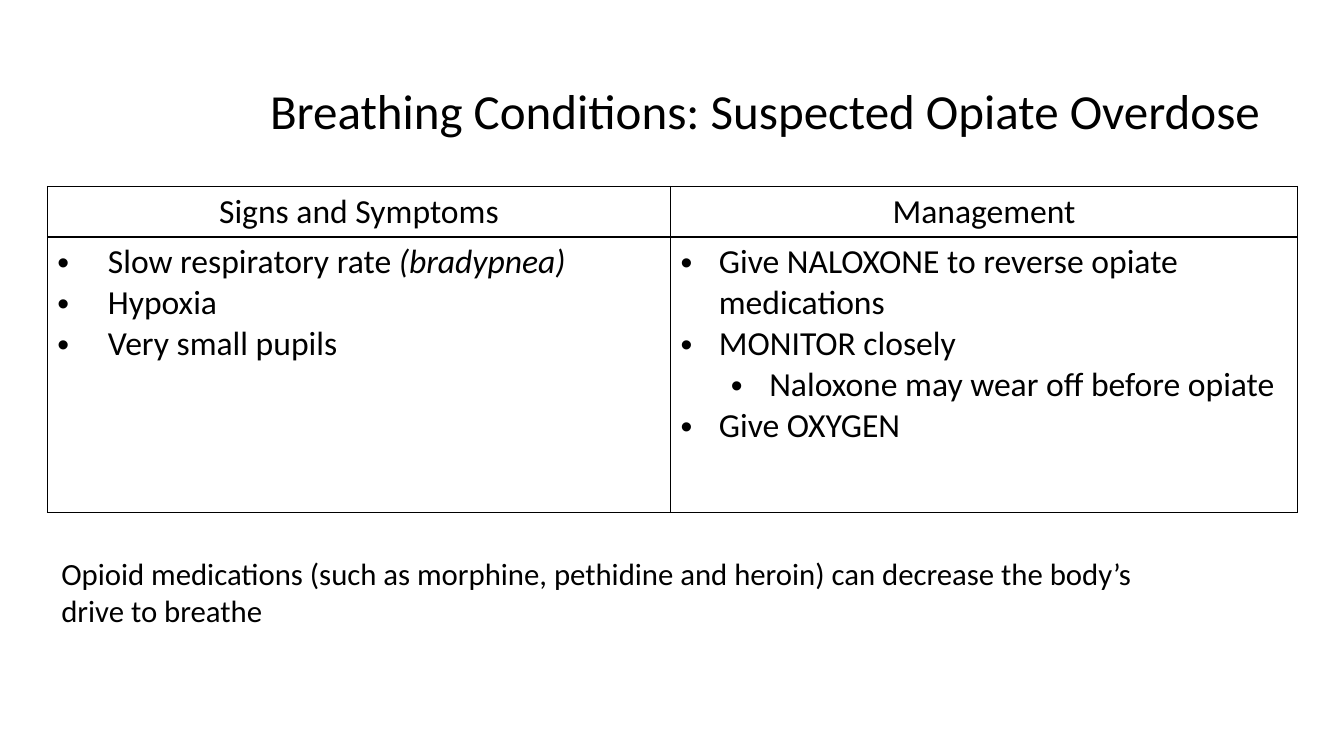
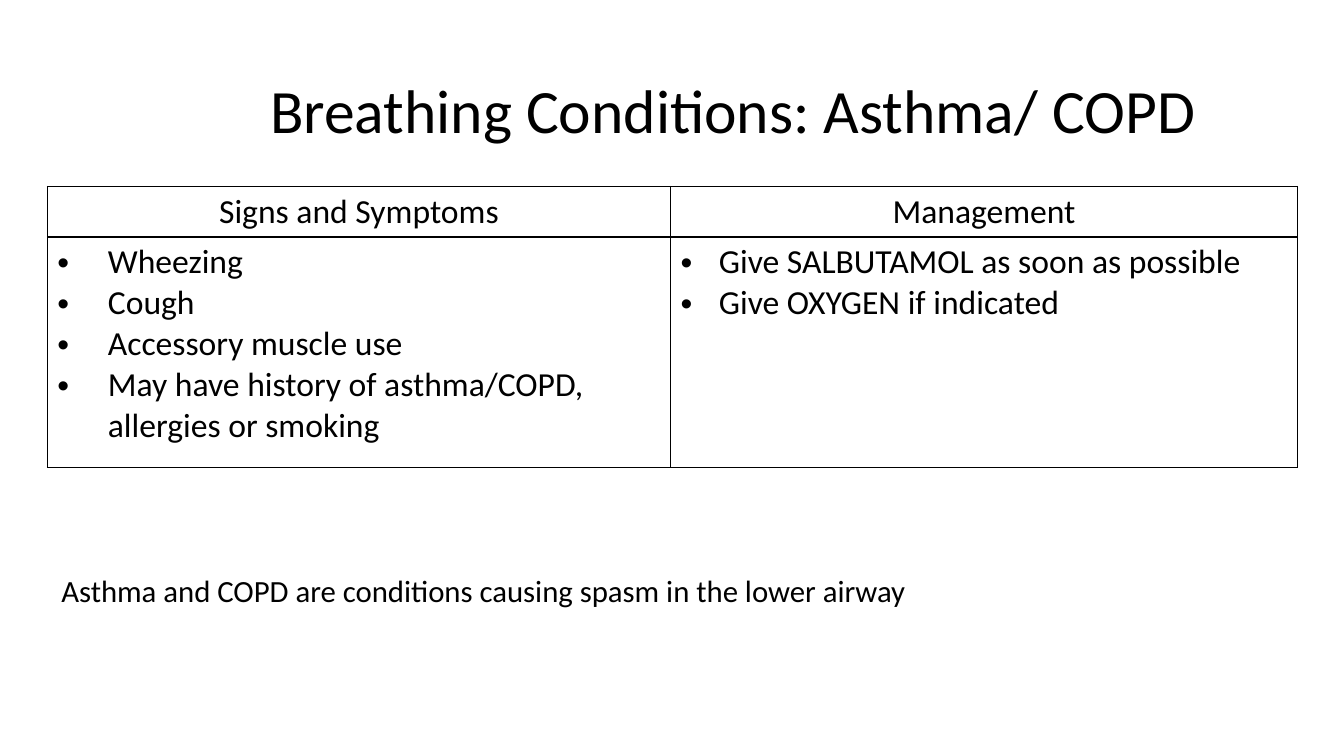
from pptx import Presentation
from pptx.dml.color import RGBColor as Rgb
from pptx.enum.text import MSO_ANCHOR as Anchor, MSO_AUTO_SIZE as Fit, PP_ALIGN as Align
from pptx.oxml import parse_xml
from pptx.oxml.ns import nsdecls
from pptx.util import Inches, Pt

COLORS = {"ink": "000000"}
FACE = "Calibri"
HEADS = ["Signs and Symptoms", "Management"]
WIDTHS = [6.18, 6.22]
INDENTS = [0.5, 0.38]
STEP = 0.5
HEAD_H = 0.5

SLIDES = [
    {
        "title": "Breathing Conditions: Suspected Opiate Overdose",
        "size": 35,
        "body_h": 2.73,
        "lists": [
            [(0, "Slow respiratory rate ", "(bradypnea)"),
             (0, "Hypoxia"),
             (0, "Very small pupils")],
            [(0, "Give NALOXONE to reverse opiate medications"),
             (0, "MONITOR closely"),
             (1, "Naloxone may wear off before opiate"),
             (0, "Give OXYGEN")],
        ],
        "note": "Opioid medications (such as morphine, pethidine and heroin) "
                "can decrease the body’s drive to breathe",
        "note_box": (0.51, 5.45, 10.95, 0.84),
    },
    {
        "title": "Breathing Conditions: Asthma/ COPD",
        "size": 44,
        "body_h": 2.29,
        "lists": [
            [(0, "Wheezing"),
             (0, "Cough"),
             (0, "Accessory muscle use"),
             (0, "May have history of asthma/COPD, allergies or smoking")],
            [(0, "Give SALBUTAMOL as soon as possible"),
             (0, "Give OXYGEN if indicated")],
        ],
        "note": "Asthma and COPD are conditions causing spasm in the lower airway",
        "note_box": (0.51, 5.62, 10.95, 0.47),
    },
]


def style(para, size):
    """Set the shared face and ink on a paragraph."""
    font = para.font
    font.name, font.size = FACE, Pt(size)
    font.color.rgb = Rgb.from_string(COLORS["ink"])


def add_text(slide, box, text, size):
    """Add a wrapped text box with one paragraph and return its frame."""
    frame = slide.shapes.add_textbox(*map(Inches, box)).text_frame
    frame.word_wrap = True
    para = frame.paragraphs[0]
    para.text = text
    style(para, size)
    return frame


def add_title(slide, box, text, size):
    """Add the slide title, centred in the height of its box."""
    frame = add_text(slide, box, text, size)
    frame.vertical_anchor = Anchor.MIDDLE
    frame.paragraphs[0].line_spacing = 0.9


def add_note(slide, box, text):
    """Add the closing remark in a box that grows with its text."""
    add_text(slide, box, text, 22).auto_size = Fit.SHAPE_TO_FIT_TEXT


def frame_cell(cell):
    """Give a cell thin borders on all sides and no fill."""
    props = cell._tc.get_or_add_tcPr()
    for side in "LRTB":
        props.append(parse_xml(
            f'<a:ln{side} {nsdecls("a")} w="{Pt(1)}"><a:solidFill>'
            f'<a:srgbClr val="{COLORS["ink"]}"/></a:solidFill></a:ln{side}>'))
    cell.fill.background()


def add_bullet(para, level, indent):
    """Give a paragraph a hanging bullet."""
    para.level = level
    props = para._p.get_or_add_pPr()
    props.set("marL", str(Inches(indent + level * STEP)))
    props.set("indent", str(-Inches(indent)))
    props.append(parse_xml(f'<a:buFont {nsdecls("a")} typeface="Arial"/>'))
    props.append(parse_xml(f'<a:buChar {nsdecls("a")} char="•"/>'))


def fill_list(cell, items, indent):
    """Write bullets in a cell, with any closing part in italics."""
    frame = cell.text_frame
    for row, (level, text, *tail) in enumerate(items):
        para = frame.add_paragraph() if row else frame.paragraphs[0]
        add_bullet(para, level, indent)
        style(para, 24)
        para.add_run().text = text
        for part in tail:
            run = para.add_run()
            run.text = part
            run.font.italic = True


def add_grid(slide, left, top, body_h, lists):
    """Add the table of signs and management."""
    table = slide.shapes.add_table(
        2, len(HEADS), Inches(left), Inches(top),
        Inches(sum(WIDTHS)), Inches(HEAD_H + body_h)).table
    table.first_row = table.horz_banding = False
    for row, high in zip(table.rows, (HEAD_H, body_h)):
        row.height = Inches(high)
    for col, (head, wide) in enumerate(zip(HEADS, WIDTHS)):
        table.columns[col].width = Inches(wide)
        para = table.cell(0, col).text_frame.paragraphs[0]
        para.text, para.alignment = head, Align.CENTER
        style(para, 24)
        fill_list(table.cell(1, col), lists[col], INDENTS[col])
    for cell in table.iter_cells():
        frame_cell(cell)


def add_slide(deck, data):
    """Build one condition slide."""
    slide = deck.slides.add_slide(deck.slide_layouts[6])
    add_title(slide, (2.58, 0.4, 10.28, 1.45), data["title"], data["size"])
    add_grid(slide, 0.47, 1.85, data["body_h"], data["lists"])
    add_note(slide, data["note_box"], data["note"])


def main():
    """Build and save the deck."""
    deck = Presentation()
    deck.slide_width, deck.slide_height = Inches(13.33), Inches(7.5)
    for data in SLIDES:
        add_slide(deck, data)
    deck.save("out.pptx")


if __name__ == "__main__":
    main()
